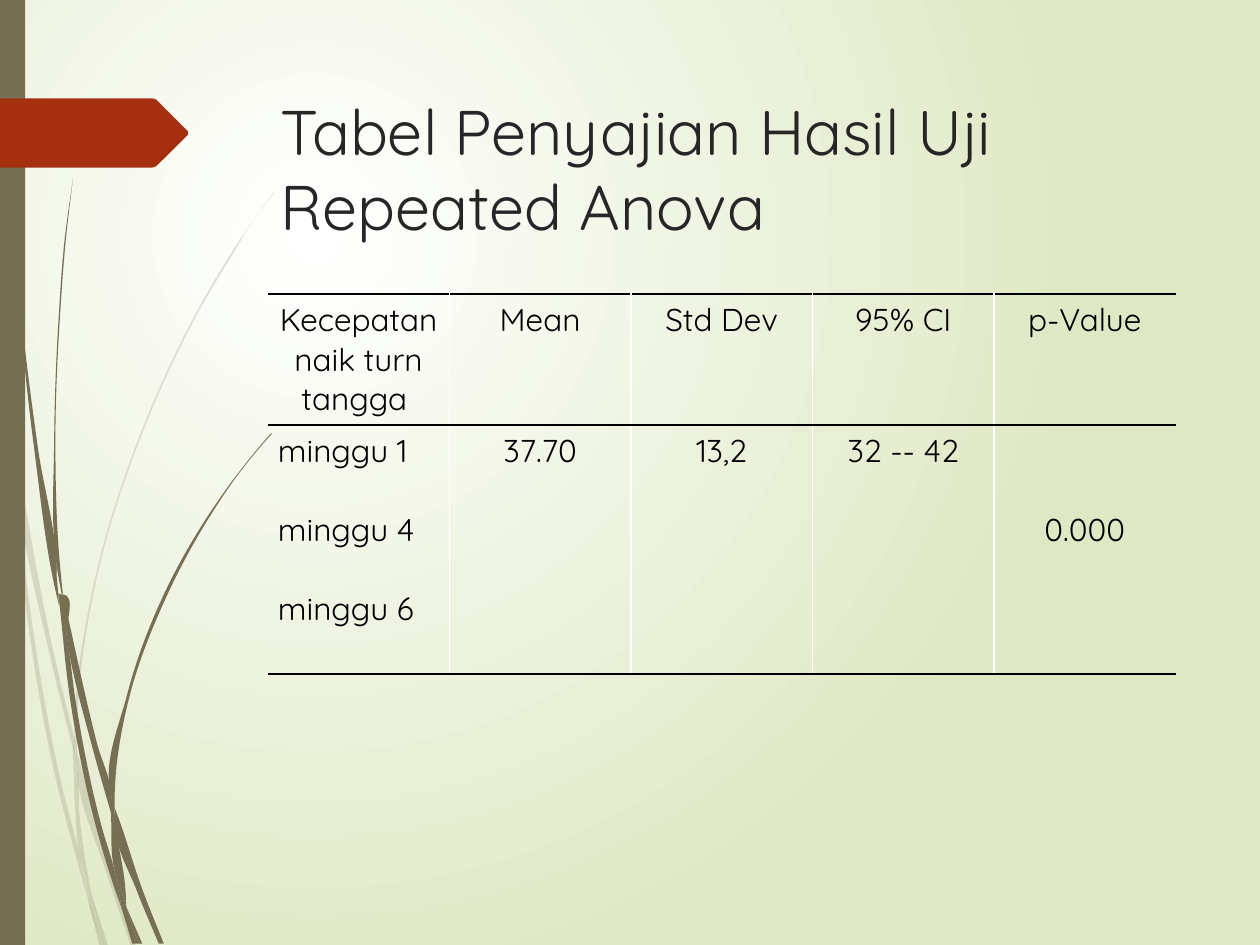
import math

import pptx
import pptx.dml.color
import pptx.enum.shapes
import pptx.enum.text
import pptx.oxml
import pptx.oxml.ns
import pptx.util

Pt = pptx.util.Pt
qn = pptx.oxml.ns.qn
ALIGN = pptx.enum.text.PP_ALIGN
NAMESPACE = pptx.oxml.ns.nsdecls("a")

FONT = "Quicksand"
COLORS = {"olive": "766F54", "red": "A53010", "title": "262626", "ink": "000000",
          "rule": "FFFFFF", "glow": "FFFFFF", "ground": "DFE8C4"}
UNIT = 0.72  # outline data is in hundredths of an inch; this gives points

# Grass blades: each is two smooth edges, followed once around the outline
FAINT_BLADES = [
    ([(8, 350), (6, 322), (0, 282)], [(0, 299), (7, 344), (8, 350)]),
    ([(10, 345), (12, 376), (40, 522), (59, 599)], [(59, 586), (43, 520), (10, 345)]),
    ([(61, 596), (61, 610), (85, 694), (104, 751)],
     [(108, 751), (88, 692), (64, 607), (61, 596)]),
    ([(73, 711), (83, 751)], [(86, 751), (73, 711)]),
    ([(8, 350), (19, 470), (45, 621), (64, 693), (70, 714)],
     [(70, 714), (64, 683), (48, 619), (22, 469), (12, 376), (8, 350)]),
    ([(58, 599), (60, 646), (64, 683), (67, 692), (73, 711)],
     [(73, 711), (72, 706), (63, 646), (61, 610), (58, 599)]),
    ([(61, 596), (61, 584), (76, 462), (111, 349), (159, 245), (187, 198), (201, 175), (217, 154)],
     [(217, 153), (201, 175), (186, 197), (158, 244), (110, 348), (75, 461), (59, 584), (59, 586)]),
    ([(70, 714), (79, 751)], [(82, 751), (70, 714)]),
    ([(61, 608), (61, 610), (61, 596)], [(59, 586), (58, 599), (61, 608)]),
    ([(65, 683), (69, 707), (70, 714), (82, 751)], [(83, 751), (73, 711), (67, 692), (65, 683)]),
]
SOLID_BLADES = [
    ([(2, 0), (3, 48), (5, 110), (14, 233), (27, 355), (46, 477), (47, 481)],
     [(47, 481), (45, 457), (45, 453), (30, 355), (15, 232), (6, 109), (4, 48), (3, 0)]),
    ([(50, 472), (53, 505), (73, 592), (88, 645)], [(88, 633), (88, 631), (77, 590), (50, 472)]),
    ([(91, 641), (91, 656), (109, 708), (126, 749)],
     [(130, 749), (113, 706), (94, 649), (91, 641)]),
    ([(47, 477), (56, 557), (77, 659), (92, 708), (97, 722)],
     [(97, 722), (96, 717), (91, 691), (81, 657), (60, 556), (53, 505), (47, 477)]),
    ([(50, 472), (48, 453), (44, 349), (48, 245), (52, 193), (58, 141)],
     [(58, 141), (51, 193), (47, 245), (43, 349), (45, 449), (49, 472)]),
    ([(100, 719), (110, 749)], [(113, 749), (100, 719)]),
    ([(45, 449), (45, 453), (47, 477), (53, 505)], [(53, 505), (50, 472), (49, 472), (45, 449)]),
    ([(91, 641), (91, 633), (103, 552), (131, 476), (169, 406), (191, 374), (203, 359), (216, 344)],
     [(215, 344), (203, 358), (191, 373), (168, 405), (129, 474), (101, 551), (88, 631), (91, 641)]),
    ([(97, 722), (105, 749)], [(108, 749), (97, 722)]),
    ([(88, 645), (91, 691), (96, 706), (100, 719)],
     [(100, 719), (100, 716), (91, 656), (90, 651), (88, 645)]),
    ([(88, 645), (90, 651), (91, 656), (91, 641)], [(88, 631), (88, 633), (88, 645)]),
    ([(91, 691), (96, 717), (97, 722), (108, 749)], [(110, 749), (100, 719), (96, 706), (91, 691)]),
]
TAG_OUTLINE = [(0, 78), (121, 78), (124, 79), (149, 104), (149, 107),
               (124, 132), (121, 133), (0, 133)]

HEADERS = ["Kecepatan naik turn tangga ", "Mean", "Std Dev", "95% CI", "p-Value"]
VALUES = [["minggu 1", "minggu 4", "minggu 6"], ["37.70"], ["13,2"], ["32 -- 42"], ["0.000"]]
TABLE_LEFT, TABLE_TOP, COLUMN_WIDTH = 153, 168, 103.75
ROW_HEIGHTS = [74.9, 142.3]
LINE_HEIGHT = 22.5


def rgb(name):
    return pptx.dml.color.RGBColor.from_string(COLORS[name])


def write_text(para, text, size=18, color="ink", align=ALIGN.CENTER, before=0):
    span = para.add_run()
    span.text = text
    span.font.name = FONT
    span.font.size = Pt(size)
    span.font.color.rgb = rgb(color)
    para.alignment = align
    para.space_before = Pt(before)


def paint(shape, color, opacity=100):
    shape.shadow.inherit = False
    shape.line.fill.background()
    shape.fill.solid()
    shape.fill.fore_color.rgb = rgb(color)
    if opacity < 100:
        tint = shape._element.spPr.find(".//" + qn("a:srgbClr"))
        tint.append(tint.makeelement(qn("a:alpha"), {"val": str(opacity * 1000)}))


def add_outline(shapes, points, color, opacity=100):
    corners = [(Pt(x * UNIT), Pt(y * UNIT)) for x, y in points]
    builder = shapes.build_freeform(*corners[0])
    builder.add_line_segments(corners[1:], close=True)
    shape = builder.convert_to_shape()
    paint(shape, color, opacity)
    return shape


def edge_curves(points):
    """Bezier segments (two handles and an end) smoothly through the points."""
    gaps = [math.dist(a, b) for a, b in zip(points, points[1:])]
    slopes = [[(q - p) / gap for p, q in zip(a, b)]
              for a, b, gap in zip(points, points[1:], gaps)]
    inner = [[(u * h + v * g) / (g + h) for u, v in zip(s, t)]
             for s, t, g, h in zip(slopes, slopes[1:], gaps, gaps[1:])]
    tangents = [slopes[0]] + inner + [slopes[-1]]
    for i, gap in enumerate(gaps):
        start, end = points[i], points[i + 1]
        yield [tuple(p + m * gap / 3 for p, m in zip(start, tangents[i])),
               tuple(p - m * gap / 3 for p, m in zip(end, tangents[i + 1])), end]


def add_blade(shapes, first, second, opacity):
    shape = add_outline(shapes, first + second, "olive", opacity)
    route = shape._element.spPr.find(".//" + qn("a:path"))
    for step in list(route):
        route.remove(step)

    def draw(kind, points=()):
        places = "".join(f'<a:pt x="{Pt(x * UNIT) - shape.left}" y="{Pt(y * UNIT) - shape.top}"/>'
                         for x, y in points)
        route.append(pptx.oxml.parse_xml(f"<a:{kind} {NAMESPACE}>{places}</a:{kind}>"))

    draw("moveTo", first[:1])
    for curve in edge_curves(first):
        draw("cubicBezTo", curve)
    if first[-1] != second[0]:
        draw("lnTo", second[:1])
    for curve in edge_curves(second):
        draw("cubicBezTo", curve)
    draw("close")


def add_blades(page, blades, opacity):
    group = page.shapes.add_group_shape()
    for first, second in blades:
        add_blade(group.shapes, first, second, opacity)


def set_background(page):
    fill = page.background.fill
    fill.gradient()
    for position, (stop, name) in enumerate(zip(fill.gradient_stops, ("glow", "ground"))):
        stop.color.rgb = rgb(name)
        stop.position = position
    linear = page._element.find(".//" + qn("a:lin"))
    linear.getparent().replace(linear, pptx.oxml.parse_xml(
        f'<a:path {NAMESPACE} path="circle">'
        '<a:fillToRect l="50000" t="50000" r="100000" b="100000"/></a:path>'))


def add_title(page, text):
    box = page.shapes.title
    box.left, box.top, box.width, box.height = Pt(153), Pt(49), Pt(519), Pt(101)
    frame = box.text_frame
    frame.word_wrap = True
    frame.auto_size = pptx.enum.text.MSO_AUTO_SIZE.NONE
    frame.vertical_anchor = pptx.enum.text.MSO_ANCHOR.TOP
    write_text(frame.paragraphs[0], text, size=36, color="title", align=ALIGN.LEFT)


def set_borders(cell, sides):
    props = cell._tc.get_or_add_tcPr()
    for index, side in enumerate("LRTB"):
        color = sides[side]
        fill = (f'<a:solidFill><a:srgbClr val="{COLORS[color]}"/></a:solidFill>'
                if color else "<a:noFill/>")
        props.insert(index, pptx.oxml.parse_xml(
            f'<a:ln{side} {NAMESPACE} w="{Pt(1)}">{fill}</a:ln{side}>'))


def add_results_table(page):
    count = len(HEADERS)
    table = page.shapes.add_table(2, count, Pt(TABLE_LEFT), Pt(TABLE_TOP),
                                  Pt(COLUMN_WIDTH * count), Pt(sum(ROW_HEIGHTS))).table
    table.first_row = table.horz_banding = False
    for row, height in zip(table.rows, ROW_HEIGHTS):
        row.height = Pt(height)
    for col in range(count):
        table.columns[col].width = Pt(COLUMN_WIDTH)
        for row, lines in enumerate(([HEADERS[col]], VALUES[col])):
            cell = table.cell(row, col)
            cell.fill.background()
            cell.margin_left = cell.margin_right = Pt(5.75)
            cell.margin_top = cell.margin_bottom = Pt(3.6)
            set_borders(cell, {"L": "rule" if col else None,
                               "R": "rule" if col < count - 1 else None,
                               "T": "ink", "B": "ink"})
            align = ALIGN.LEFT if row and not col else ALIGN.CENTER
            for i, line in enumerate(lines):
                frame = cell.text_frame
                para = frame.add_paragraph() if i else frame.paragraphs[0]
                write_text(para, line, align=align, before=LINE_HEIGHT if i else 0)
    # The p-value stands level with the middle week
    table.cell(1, count - 1).margin_top = Pt(3.6 + 2 * LINE_HEIGHT)


def main():
    deck = pptx.Presentation()
    deck.slide_width, deck.slide_height = Pt(720), Pt(540)
    page = deck.slides.add_slide(deck.slide_layouts[5])
    set_background(page)
    # Decoration on the left
    add_blades(page, FAINT_BLADES, opacity=20)
    add_blades(page, SOLID_BLADES, opacity=100)
    bar = page.shapes.add_shape(pptx.enum.shapes.MSO_SHAPE.RECTANGLE, 0, 0, Pt(14.4), Pt(540))
    paint(bar, "olive")
    add_outline(page.shapes, TAG_OUTLINE, "red")
    # Content
    add_title(page, "Tabel Penyajian Hasil Uji Repeated Anova")
    add_results_table(page)
    deck.save("out.pptx")


if __name__ == "__main__":
    main()
